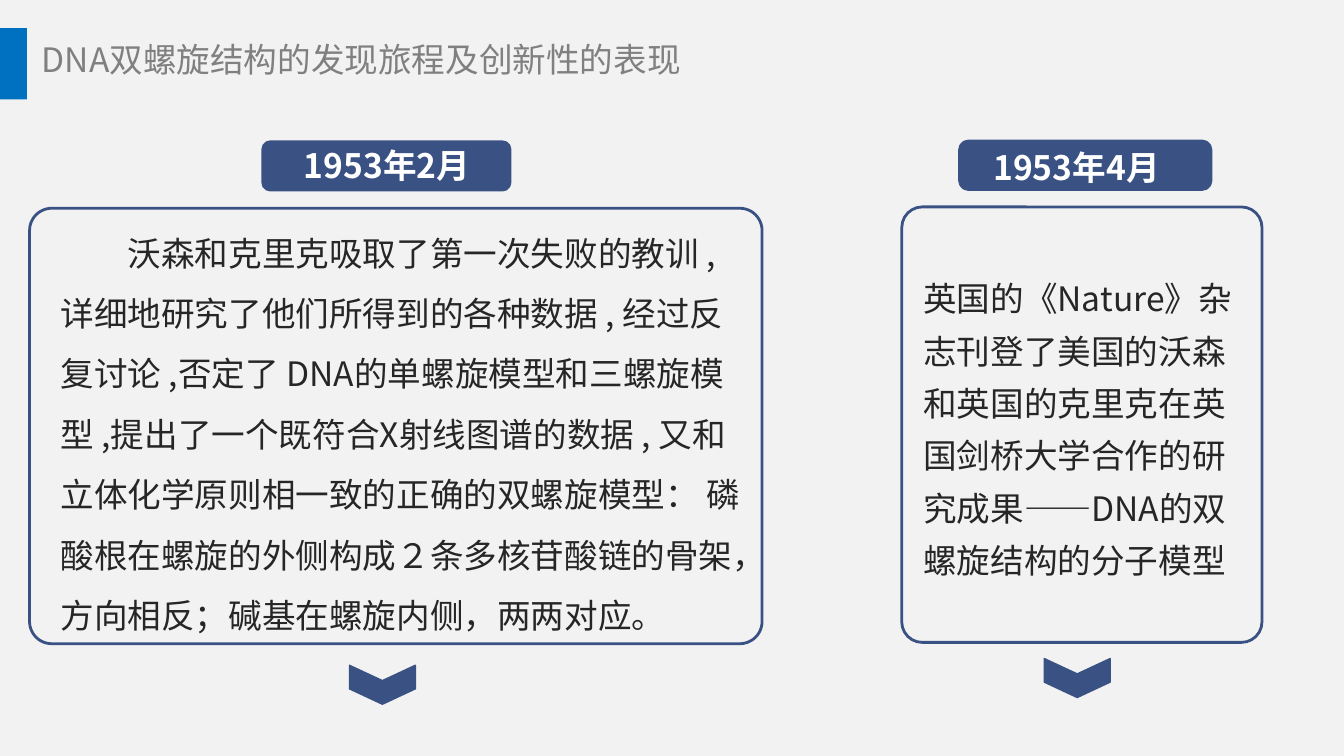
from dataclasses import dataclass

from lxml.etree import SubElement
from pptx import Presentation
from pptx.dml.color import RGBColor
from pptx.enum.shapes import MSO_SHAPE as Shape
from pptx.enum.text import MSO_ANCHOR as Anchor, MSO_AUTO_SIZE as AutoSize, PP_ALIGN as Align
from pptx.oxml.ns import qn
from pptx.util import Inches, Pt

FONT = "Noto Sans CJK SC"
PAGE_WIDTH = 10
PAGE_HEIGHT = PAGE_WIDTH * 9 / 16
PAPER = RGBColor(0xF2, 0xF2, 0xF2)
ACCENT = RGBColor(0x00, 0x70, 0xC0)
NAVY = RGBColor(0x3A, 0x52, 0x83)
GREY = RGBColor(0x80, 0x80, 0x80)
INK = RGBColor(0x26, 0x26, 0x26)
WHITE = RGBColor(0xFF, 0xFF, 0xFF)


@dataclass
class Area:
    left: float
    top: float
    width: float
    height: float

    def lengths(self) -> list:
        return [Inches(n) for n in (self.left, self.top, self.width, self.height)]


@dataclass
class Milestone:
    date: str
    story: str
    badge: Area
    badge_line: float
    date_area: Area
    frame: Area
    corner: float
    story_area: Area
    spacing: float
    indent: float
    arrow: Area


MILESTONES = [
    Milestone(
        "1953年2月",
        "沃森和克里克吸取了第一次失败的教训 , 详细地研究了他们所得到的各种数据 , "
        "经过反复讨论 ,否定了 DNA的单螺旋模型和三螺旋模型 ,提出了一个既符合X射线图谱的数据 , "
        "又和立体化学原则相一致的正确的双螺旋模型： 磷酸根在螺旋的外侧构成２条多核苷酸链的骨架，"
        "方向相反；碱基在螺旋内侧，两两对应。",
        Area(1.95, 1.05, 1.85, 0.37), 0.75, Area(2.05, 1.05, 1.66, 0.37),
        Area(0.22, 1.55, 5.45, 3.24), 0.051,
        Area(0.38, 1.55, 5.28, 3.2), 1.5, 0.5,
        Area(2.7, 4.85, 0.29, 0.49)),
    Milestone(
        "1953年4月",
        "英国的《Nature》杂志刊登了美国的沃森和英国的克里克在英国剑桥大学合作的研究成果"
        "——DNA的双螺旋结构的分子模型",
        Area(7.15, 1.06, 1.85, 0.34), 3, Area(7.18, 1.06, 1.66, 0.37),
        Area(6.71, 1.54, 2.68, 3.24), 0.057,
        Area(6.8, 1.95, 2.53, 2.39), 1.3, 0,
        Area(7.87, 4.8, 0.29, 0.49)),
]


def draw_shape(page, kind, area: Area, fill=None, line=None, weight: float = 0.75, adjust=None):
    shape = page.shapes.add_shape(kind, *area.lengths())
    shape.shadow.inherit = False
    if fill is None:
        shape.fill.background()
    else:
        shape.fill.solid()
        shape.fill.fore_color.rgb = fill
    if line is None:
        shape.line.fill.background()
    else:
        shape.line.color.rgb = line
        shape.line.width = Pt(weight)
    if adjust is not None:
        shape.adjustments[0] = adjust
    return shape


def write_text(box, text: str, color: RGBColor, *, align=Align.LEFT, bold: bool = False,
               spacing: float = 1.0, indent: float = 0, wrap: bool = True,
               inset_x: float = 0.07, inset_y: float = 0.03) -> None:
    frame = box.text_frame
    frame.word_wrap = wrap
    frame.auto_size = AutoSize.SHAPE_TO_FIT_TEXT
    frame.vertical_anchor = Anchor.TOP
    frame.margin_left = frame.margin_right = Inches(inset_x)
    frame.margin_top = frame.margin_bottom = Inches(inset_y)
    para = frame.paragraphs[0]
    para.alignment = align
    para.line_spacing = spacing
    para.space_before = Pt(0)
    if indent:
        properties = para._p.get_or_add_pPr()
        properties.set("marL", "0")
        properties.set("indent", str(Inches(indent)))
    span = para.add_run()
    span.text = text
    span.font.size = Pt(18)
    span.font.bold = bold
    span.font.color.rgb = color
    span.font.name = FONT
    # Chinese characters take the East Asian font
    SubElement(span._r.get_or_add_rPr(), qn("a:ea"), typeface=FONT)


def draw_milestone(page, item: Milestone) -> None:
    # Story in its rounded frame
    draw_shape(page, Shape.ROUNDED_RECTANGLE, item.frame, line=NAVY, weight=1.5, adjust=item.corner)
    story = page.shapes.add_textbox(*item.story_area.lengths())
    write_text(story, item.story, INK, spacing=item.spacing, indent=item.indent)
    # Date badge
    draw_shape(page, Shape.ROUNDED_RECTANGLE, item.badge, NAVY, NAVY, item.badge_line, 0.167)
    date = page.shapes.add_textbox(*item.date_area.lengths())
    write_text(date, item.date, WHITE, align=Align.CENTER, bold=True)
    # Chevron pointing down
    arrow = draw_shape(page, Shape.CHEVRON, item.arrow, NAVY, NAVY, adjust=0.394)
    arrow.rotation = 90


def main() -> None:
    deck = Presentation()
    deck.slide_width, deck.slide_height = Inches(PAGE_WIDTH), Inches(PAGE_HEIGHT)
    page = deck.slides.add_slide(deck.slide_layouts[5])
    page.background.fill.solid()
    page.background.fill.fore_color.rgb = PAPER

    # Heading with its side bar
    draw_shape(page, Shape.RECTANGLE, Area(0, 0.21, 0.2, 0.53), ACCENT)
    title = page.shapes.title
    title.left, title.top, title.width, title.height = Area(0.2, 0.24, 5.08, 0.41).lengths()
    write_text(title, "DNA双螺旋结构的发现旅程及创新性的表现", GREY,
               wrap=False, inset_x=0.11, inset_y=0.05)

    for item in MILESTONES:
        draw_milestone(page, item)
    deck.save("out.pptx")


if __name__ == "__main__":
    main()
